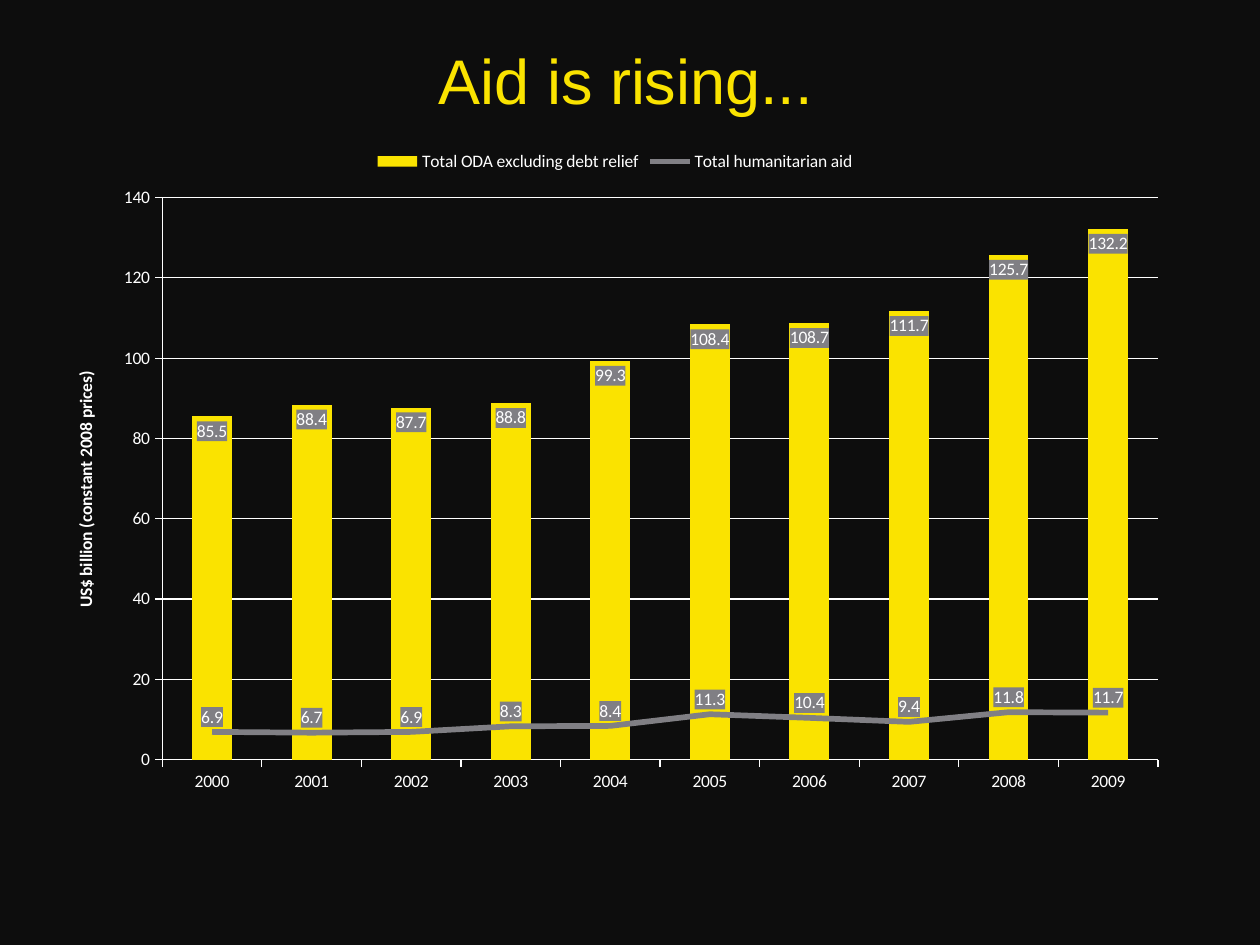
import lxml.etree
import pptx
import pptx.chart.data
import pptx.dml.color
import pptx.enum.chart
import pptx.enum.text
import pptx.oxml
import pptx.oxml.ns
import pptx.util

Cm = pptx.util.Cm
Pt = pptx.util.Pt
qn = pptx.oxml.ns.qn
RGBColor = pptx.dml.color.RGBColor

BLACK = RGBColor(0x0D, 0x0D, 0x0D)
YELLOW = RGBColor(0xFA, 0xE3, 0x00)
GREY = RGBColor(0x80, 0x7F, 0x84)
WHITE = RGBColor(0xFF, 0xFF, 0xFF)

presentation = pptx.Presentation()
presentation.slide_width = Cm(25.4)
presentation.slide_height = Cm(19.05)
slide = presentation.slides.add_slide(presentation.slide_layouts[6])
slide.background.fill.solid()
slide.background.fill.fore_color.rgb = BLACK

title = slide.shapes.add_textbox(Cm(1.19), Cm(0), Cm(22.86), Cm(3.18))
title.text_frame.word_wrap = True
title.text_frame.vertical_anchor = pptx.enum.text.MSO_ANCHOR.MIDDLE
paragraph = title.text_frame.paragraphs[0]
paragraph.alignment = pptx.enum.text.PP_ALIGN.CENTER
run = paragraph.add_run()
run.text = "Aid is rising..."
run.font.name = "Arial"
run.font.size = Pt(36)
run.font.color.rgb = YELLOW

chart_data = pptx.chart.data.CategoryChartData(number_format="0.0")
chart_data.categories = [str(year) for year in range(2000, 2010)]
chart_data.add_series(
    "Total ODA excluding debt relief",
    [85.5, 88.4, 87.7, 88.8, 99.3, 108.4, 108.7, 111.7, 125.7, 132.2],
)
chart_data.add_series(
    "Total humanitarian aid",
    [6.9, 6.7, 6.9, 8.3, 8.4, 11.3, 10.4, 9.4, 11.8, 11.7],
)
chart = slide.shapes.add_chart(
    pptx.enum.chart.XL_CHART_TYPE.COLUMN_STACKED,
    Cm(0.99), Cm(2.77), Cm(22.81), Cm(13.49), chart_data,
).chart
chart.has_title = False
chart.font.name = "Calibri"
chart.font.size = Pt(10)
chart.font.color.rgb = WHITE

bar_chart = chart.plots[0]._element
humanitarian = bar_chart.findall(qn("c:ser"))[1]
for invert in humanitarian.findall(qn("c:invertIfNegative")):
    humanitarian.remove(invert)
line_chart = pptx.oxml.parse_xml(
    f'<c:lineChart {pptx.oxml.ns.nsdecls("c")}>'
    '<c:grouping val="standard"/><c:varyColors val="0"/><c:marker val="1"/>'
    "</c:lineChart>"
)
line_chart.insert(2, humanitarian)
for axis_id in bar_chart.findall(qn("c:axId")):
    lxml.etree.SubElement(line_chart, qn("c:axId")).set("val", axis_id.get("val"))
bar_chart.addnext(line_chart)

layout = pptx.oxml.parse_xml(
    f'<c:layout {pptx.oxml.ns.nsdecls("c")}><c:manualLayout>'
    '<c:layoutTarget val="inner"/><c:xMode val="edge"/><c:yMode val="edge"/>'
    '<c:x val="0.1"/><c:y val="0.09"/><c:w val="0.88"/><c:h val="0.84"/>'
    "</c:manualLayout></c:layout>"
)
plot_area = bar_chart.getparent()
for old_layout in plot_area.findall(qn("c:layout")):
    plot_area.remove(old_layout)
plot_area.insert(0, layout)

columns, lines = chart.plots
columns.gap_width = 150
columns.overlap = 100
columns.vary_by_categories = False
column_series = columns.series[0]
column_series.invert_if_negative = False
column_series.format.fill.solid()
column_series.format.fill.fore_color.rgb = YELLOW
line_series = lines.series[0]
line_series.smooth = False
line_series.marker.style = pptx.enum.chart.XL_MARKER_STYLE.NONE
line_series.format.line.color.rgb = GREY
line_series.format.line.width = Pt(3.25)

LabelPosition = pptx.enum.chart.XL_LABEL_POSITION
for series, position in (
    (column_series, LabelPosition.INSIDE_END),
    (line_series, LabelPosition.ABOVE),
):
    labels = series.data_labels
    labels.show_value = True
    labels.number_format = "0.0"
    labels.number_format_is_linked = False
    labels.position = position
    labels.font.name = "Calibri"
    labels.font.size = Pt(10)
    labels.font.color.rgb = WHITE
    label_fill = pptx.oxml.parse_xml(
        f'<c:spPr {pptx.oxml.ns.nsdecls("c", "a")}><a:solidFill>'
        f'<a:srgbClr val="{GREY}"/></a:solidFill></c:spPr>'
    )
    labels._element.find(qn("c:numFmt")).addnext(label_fill)

value_axis = chart.value_axis
for axis in (chart.category_axis, value_axis):
    axis.format.line.color.rgb = WHITE
    axis.format.line.width = Pt(0.75)
    axis.major_tick_mark = pptx.enum.chart.XL_TICK_MARK.OUTSIDE
value_axis.minimum_scale = 0
value_axis.maximum_scale = 140
value_axis.major_unit = 20
value_axis.tick_labels.number_format = "0"
value_axis.tick_labels.number_format_is_linked = False
value_axis.has_major_gridlines = True
value_axis.major_gridlines.format.line.color.rgb = WHITE
value_axis.major_gridlines.format.line.width = Pt(0.75)
run = value_axis.axis_title.text_frame.paragraphs[0].add_run()
run.text = "US$ billion (constant 2008 prices)"
run.font.name = "Calibri"
run.font.size = Pt(10)
run.font.bold = True
run.font.color.rgb = WHITE

chart.has_legend = True
chart.legend.position = pptx.enum.chart.XL_LEGEND_POSITION.TOP
chart.legend.include_in_layout = False

presentation.save("out.pptx")
